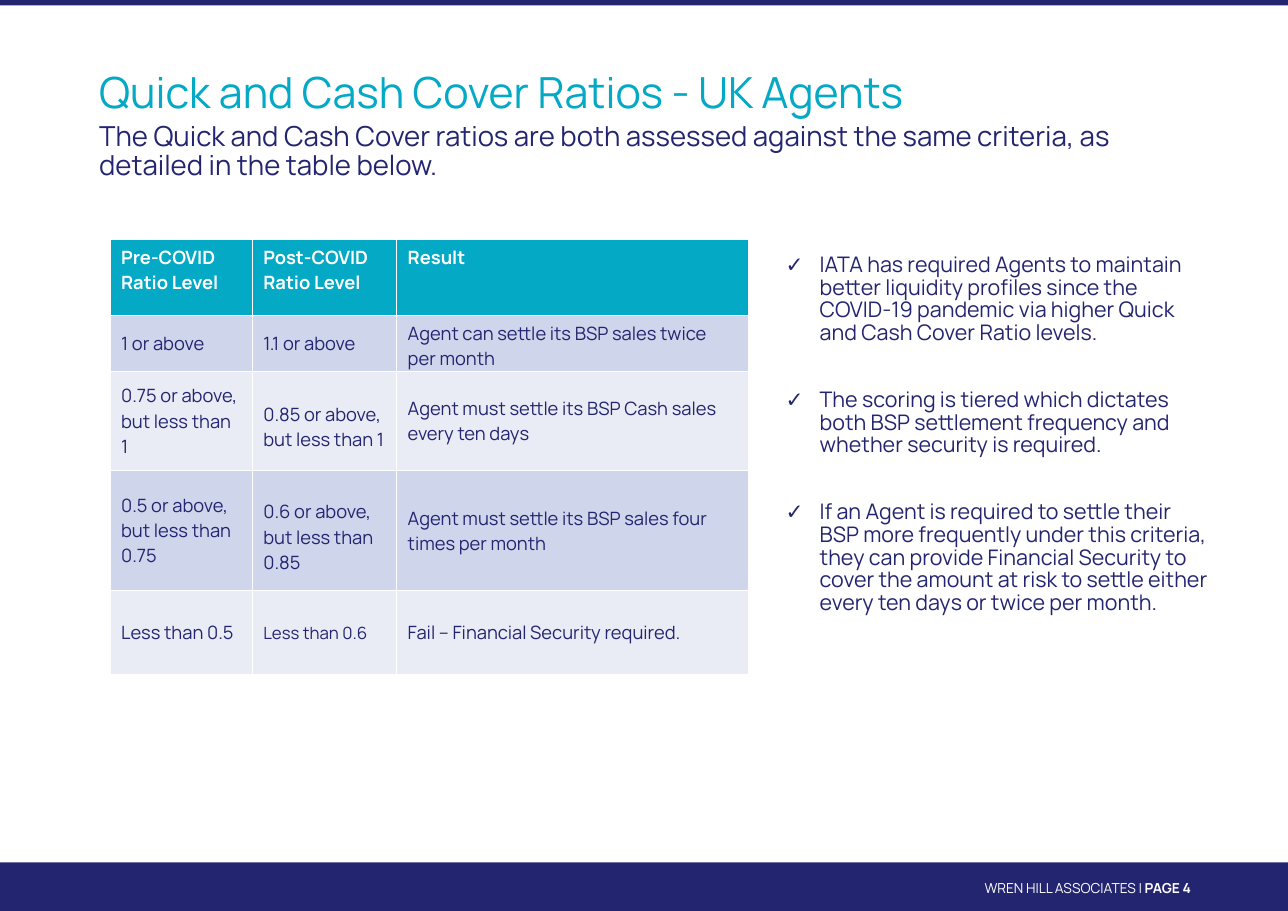
from pptx import Presentation
from pptx.dml.color import RGBColor
from pptx.enum.shapes import MSO_SHAPE
from pptx.enum.text import MSO_ANCHOR, MSO_AUTO_SIZE, PP_ALIGN
from pptx.oxml.ns import qn
from pptx.util import Inches, Pt
from lxml.etree import SubElement

HUES = {"navy": "242570", "teal": "04A9C6", "white": "FFFFFF",
        "dark": "CFD5EA", "pale": "E9EBF5"}

deck = Presentation()
deck.slide_width, deck.slide_height = Inches(11.69), Inches(8.27)
slide = deck.slides.add_slide(deck.slide_layouts[3])

# Grid of 100 columns by 100 rows
COL, ROW = deck.slide_width / 100, deck.slide_height / 100


def place(shape, left, top, wide, high):
    shape.left, shape.top = round(left * COL), round(top * ROW)
    shape.width, shape.height = round(wide * COL), round(high * ROW)
    frame = shape.text_frame
    frame.margin_left = frame.margin_right = 0
    frame.margin_top = frame.margin_bottom = 0
    frame.word_wrap = True
    frame.auto_size = MSO_AUTO_SIZE.NONE
    frame.vertical_anchor = MSO_ANCHOR.TOP
    return frame


def style(para, size, hue, bold=False):
    font = para.font
    font.name, font.size, font.bold = "Manrope", Pt(size), bold
    font.color.rgb = RGBColor.from_string(HUES[hue])


# Bars at the top and foot
for top, high in [(94.68, 5.32), (0, 0.6)]:
    bar = slide.shapes.add_shape(MSO_SHAPE.RECTANGLE, 0, round(top * ROW),
                                 deck.slide_width, round(high * ROW))
    bar.shadow.inherit = False
    bar.fill.solid()
    bar.fill.fore_color.rgb = RGBColor.from_string(HUES["navy"])
    bar.line.fill.background()

# Footer
foot = place(slide.shapes.add_textbox(0, 0, 0, 0), 59.28, 96.25, 33.19, 2.18)
para = foot.paragraphs[0]
para.alignment, para.line_spacing = PP_ALIGN.RIGHT, Pt(13)
style(para, 9, "white")
para.add_run().text = "WREN HILL ASSOCIATES | "
page = para.add_run()
page.text, page.font.bold = "PAGE 4", True

# Title and lead
title, lead, notes = slide.placeholders
para = place(title, 7.7, 7.86, 84.86, 5.68).paragraphs[0]
para.text = "Quick and Cash Cover Ratios - UK Agents"
para.alignment, para.line_spacing = PP_ALIGN.LEFT, 0.9
style(para, 28, "teal")

para = place(lead, 7.7, 13.54, 84.86, 12.7).paragraphs[0]
para.text = ("The Quick and Cash Cover ratios are both assessed against "
             "the same criteria, as detailed in the table below.")
para.line_spacing, para.space_before = 0.88, Pt(0)
props = para._p.get_or_add_pPr()
props.set("marL", "0")
props.set("indent", "0")
SubElement(props, qn("a:buNone"))
style(para, 18, "navy")

# Ratio table
RATIOS = [
    ["Pre-COVID\nRatio Level", "Post-COVID\nRatio Level", "Result"],
    ["1 or above", "1.1 or above",
     "Agent can settle its BSP sales twice per month"],
    ["0.75 or above, but less than 1", "0.85 or above, but less than 1",
     "Agent must settle its BSP Cash sales every ten days"],
    ["0.5 or above, but less than 0.75", "0.6 or above, but less than 0.85",
     "Agent must settle its BSP sales four times per month"],
    ["Less than 0.5", "Less than 0.6", "Fail – Financial Security required."],
]
WIDES = [11.04, 11.21, 27.29]
HIGHS = [8.4, 6.1, 10.88, 13.2, 9.2]
grid = slide.shapes.add_table(
    len(HIGHS), len(WIDES), round(8.55 * COL), round(26.24 * ROW),
    round(sum(WIDES) * COL), round(sum(HIGHS) * ROW)).table
for col, wide in zip(grid.columns, WIDES):
    col.width = round(wide * COL)
for r, (texts, high) in enumerate(zip(RATIOS, HIGHS)):
    grid.rows[r].height = round(high * ROW)
    fill = "teal" if r == 0 else "dark" if r % 2 else "pale"
    for c, text in enumerate(texts):
        cell = grid.cell(r, c)
        cell.text = text
        cell.fill.solid()
        cell.fill.fore_color.rgb = RGBColor.from_string(HUES[fill])
        cell.vertical_anchor = MSO_ANCHOR.MIDDLE if r else MSO_ANCHOR.TOP
        for para in cell.text_frame.paragraphs:
            size = 11 if text == "Less than 0.6" else 12
            style(para, size, "navy" if r else "white", r == 0)
grid.cell(1, 2).margin_bottom = 0
for r in (2, 3):
    grid.cell(r, 1).margin_top = round(2 * ROW)

# Ticked list
NOTES = [
    "IATA has required Agents to maintain better liquidity profiles since "
    "the COVID-19 pandemic via higher Quick and Cash Cover Ratio levels.",
    "The scoring is tiered which dictates both BSP settlement frequency "
    "and whether security is required.",
    "If an Agent is required to settle their BSP more frequently under this "
    "criteria, they can provide Financial Security to cover the amount at "
    "risk to settle either every ten days or twice per month.",
]
frame = place(notes, 60.99, 27.93, 33.28, 46.8)
frame.text = "\n".join(NOTES)
for para in frame.paragraphs:
    para.line_spacing = 0.88
    para.space_before, para.space_after = Pt(0), Pt(29)
    props = para._p.get_or_add_pPr()
    props.set("marL", str(Inches(0.31)))
    props.set("indent", str(-Inches(0.31)))
    SubElement(props, qn("a:buFont"), typeface="Manrope")
    SubElement(props, qn("a:buChar"), char="✓")
    style(para, 14, "navy")

deck.save("out.pptx")
